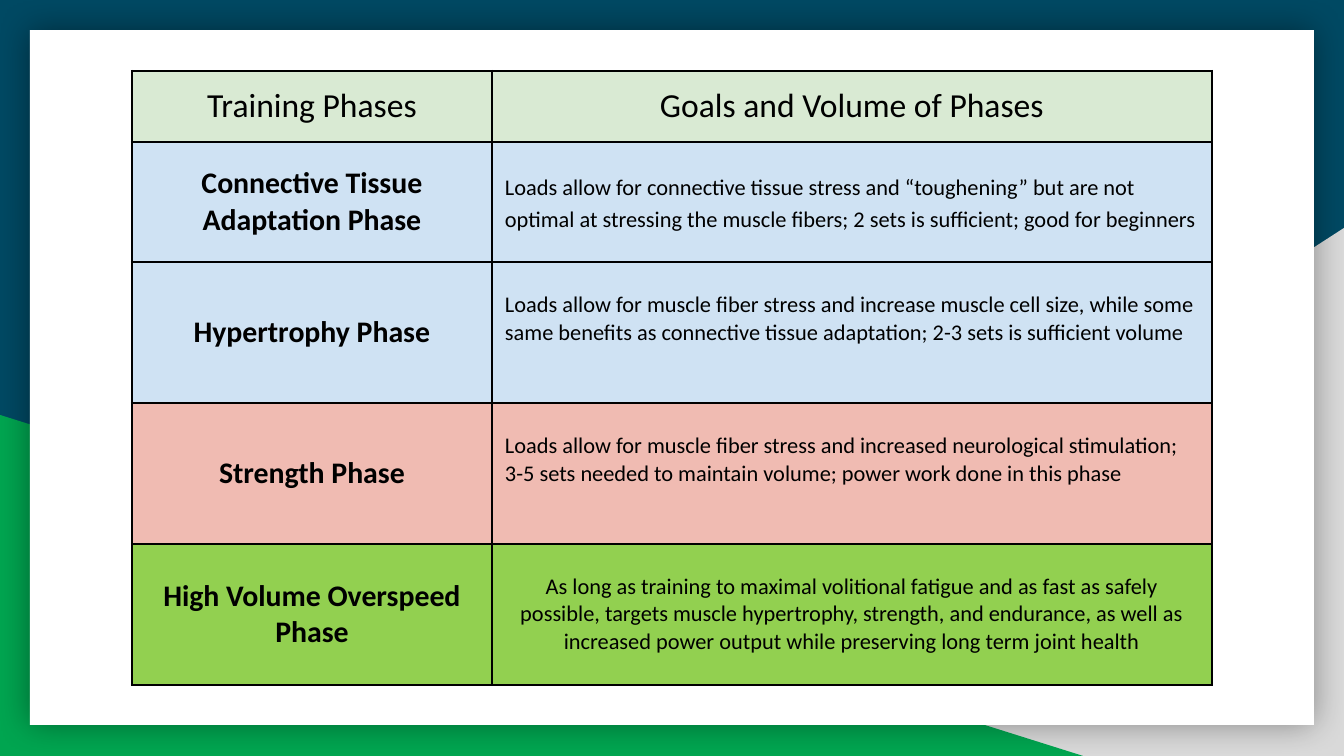
"""Builds a slide with a table of training phases and their goals."""
from dataclasses import dataclass

from lxml.etree import SubElement as Sub
from pptx import Presentation
from pptx.dml.color import RGBColor as RGB
from pptx.enum.shapes import MSO_SHAPE as Shape
from pptx.enum.text import MSO_ANCHOR as Anchor, PP_ALIGN as Align
from pptx.oxml.ns import qn
from pptx.util import Emu, Pt


@dataclass(frozen=True)
class Theme:
    font: str = "Calibri"
    ink: str = "000000"
    navy: str = "004963"
    gray: str = "D9D9D9"
    green: str = "00A550"
    white: str = "FFFFFF"
    mint: str = "D9EAD3"
    sky: str = "CFE2F3"
    rose: str = "F0BBB2"
    lime: str = "92D050"
    head: int = 18
    phase: int = 16
    goal: int = 12
    rule: float = 1.5


def px(n):
    return Emu(round(n * 9144000 / 1344))


def paint(fill, color):
    fill.solid()
    fill.fore_color.rgb = RGB.from_string(color)


theme = Theme()
deck = Presentation()
deck.slide_width, deck.slide_height = px(1344), px(756)
slide = deck.slides.add_slide(deck.slide_layouts[6])
paint(slide.background.fill, theme.navy)

backdrop = [
    (Shape.RIGHT_TRIANGLE, (527, 228, 817, 528), theme.gray),
    (Shape.RIGHT_TRIANGLE, (0, 415, 1083, 341), theme.green),
    (Shape.RECTANGLE, (30, 30, 1284, 695), theme.white),
]
shapes = []
for kind, box, color in backdrop:
    shape = slide.shapes.add_shape(kind, *map(px, box))
    shape.shadow.inherit = False
    paint(shape.fill, color)
    shape.line.fill.background()
    shapes.append(shape)
wedge, hill, card = shapes
wedge.element.spPr.get_or_add_xfrm().set("flipH", "1")

glow = Sub(card.element.spPr.find(qn("a:effectLst")), qn("a:outerShdw"),
           blurRad=str(Pt(18)), dist="0", algn="ctr", rotWithShape="0")
tint = Sub(glow, qn("a:srgbClr"), val=theme.ink)
Sub(tint, qn("a:alpha"), val="40000")

left, mid = Align.LEFT, Align.CENTER
rows = [
    (71, theme.mint, "Training Phases", "Goals and Volume of Phases", mid, 1, 13),
    (120, theme.sky, "Connective Tissue Adaptation Phase",
     "Loads allow for connective tissue stress and “toughening” but are not "
     "optimal at stressing the muscle fibers; 2 sets is sufficient; "
     "good for beginners", left, 1.15, 13),
    (141, theme.sky, "Hypertrophy Phase",
     "Loads allow for muscle fiber stress and increase muscle cell size, "
     "while some same benefits as connective tissue adaptation; "
     "2-3 sets is sufficient volume", left, 1, 40),
    (141, theme.rose, "Strength Phase",
     "Loads allow for muscle fiber stress and increased neurological "
     "stimulation; 3-5 sets needed to maintain volume; "
     "power work done in this phase", left, 1, 40),
    (141, theme.lime, "High Volume Overspeed Phase",
     "As long as training to maximal volitional fatigue and as fast as safely "
     "possible, targets muscle hypertrophy, strength, and endurance, as well "
     "as increased power output while preserving long term joint health",
     mid, 1, 13),
]
height = sum(row[0] for row in rows)
frame = slide.shapes.add_table(len(rows), 3, px(132), px(71), px(1080), px(height))
table = frame.table
table.first_row = table.horz_banding = False
for column in table.columns:
    column.width = px(360)

for i, (tall, color, phase, goal, align, space, foot) in enumerate(rows):
    table.rows[i].height = px(tall)
    for cell in table.rows[i].cells:
        props = cell._tc.get_or_add_tcPr()
        for side in ("lnL", "lnR", "lnT", "lnB"):
            edge = Sub(props, qn("a:" + side), w=str(Pt(theme.rule)))
            Sub(Sub(edge, qn("a:solidFill")), qn("a:srgbClr"), val=theme.ink)
        paint(cell.fill, color)
    table.cell(i, 1).merge(table.cell(i, 2))

    head = i == 0
    texts = [
        (phase, theme.head if head else theme.phase, not head, mid, 1, 13),
        (goal, theme.head if head else theme.goal, False, align, space, foot),
    ]
    for j, (text, size, bold, side, lead, base) in enumerate(texts):
        cell = table.cell(i, j)
        cell.vertical_anchor = Anchor.MIDDLE
        cell.margin_left = cell.margin_right = cell.margin_top = px(13)
        cell.margin_bottom = px(base)
        para = cell.text_frame.paragraphs[0]
        para.alignment, para.line_spacing = side, lead
        run = para.add_run()
        run.text = text
        run.font.name, run.font.size, run.font.bold = theme.font, Pt(size), bold
        run.font.color.rgb = RGB.from_string(theme.ink)

deck.save("out.pptx")
